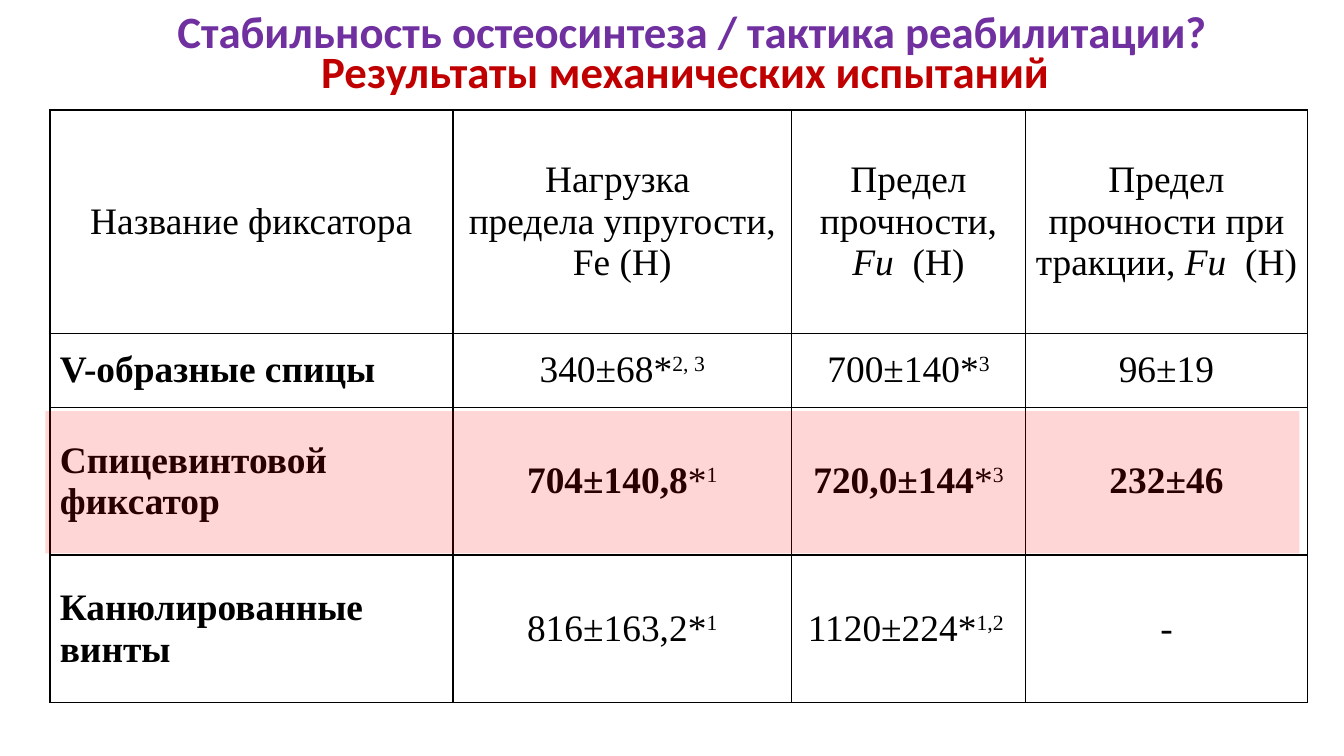
"""Build the slide that compares mechanical test results of three bone fixators."""
from dataclasses import dataclass

from lxml import etree
from pptx import Presentation
from pptx.dml.color import RGBColor
from pptx.enum import shapes, text
from pptx.oxml import ns
from pptx.util import Cm, Pt


@dataclass(frozen=True)
class Theme:
    heading_font: str = "Calibri"
    table_font: str = "Times New Roman"
    heading_size: int = 24
    table_size: int = 20
    heading: str = "7030A0"
    subheading: str = "C00000"
    ink: str = "000000"
    highlight: str = "FF0000"
    highlight_alpha: int = 16
    border: float = 1


@dataclass(frozen=True)
class Area:
    left: float
    top: float
    width: float
    height: float

    def lengths(self) -> tuple:
        return Cm(self.left), Cm(self.top), Cm(self.width), Cm(self.height)


@dataclass(frozen=True)
class Span:
    words: str
    bold: bool = False
    italic: bool = False
    raised: bool = False


@dataclass(frozen=True)
class Row:
    height: float
    cells: tuple


THEME = Theme()
TITLE_AREA = Area(1.5, 0, 23.16, 1.3)
SUBTITLE_AREA = Area(1.37, 0.74, 23.16, 1.3)
TABLE_AREA = Area(0.94, 2.08, 23.77, 11.2)
HIGHLIGHT_AREA = Area(0.86, 7.77, 23.7, 2.69)
COLUMN_WIDTHS = (7.62, 6.4, 4.42, 5.33)
SYMBOL = (Span("Fu  ", italic=True), Span("(Н)"))


def result(value: str, note: str = "", bold: bool = False) -> tuple:
    """Return the one paragraph of a measured value with its raised note."""
    if not note:
        return ((Span(value, bold),),)
    return ((Span(value, bold), Span("*"), Span(note, raised=True)),)


def name(words: str) -> tuple:
    """Return the one paragraph of a fixator name."""
    return ((Span(words, bold=True),),)


ROWS = (
    Row(4.22, (
        ((Span("Название фиксатора"),),),
        ((Span("Нагрузка "),), (Span("предела упругости, Fe (Н)"),)),
        ((Span("Предел прочности, "), *SYMBOL),),
        ((Span("Предел прочности при тракции, "), *SYMBOL),),
    )),
    Row(1.4, (name("V-образные спицы"), result("340±68", "2, 3"),
              result("700±140", "3"), result("96±19"))),
    Row(2.79, (name("Спицевинтовой фиксатор"), result("704±140,8", "1", True),
               result("720,0±144", "3", True), result("232±46", bold=True))),
    Row(2.79, (name("Канюлированные винты"), result("816±163,2", "1"),
               result("1120±224", "1,2 "), result("-"))),
)


def add_span(paragraph, words: str, *, font: str, size: float, color: str,
             bold: bool = False, italic: bool = False, raised: bool = False) -> None:
    """Append formatted words to a paragraph."""
    span = paragraph.add_run()
    span.text = words
    span.font.name = font
    span.font.size = Pt(size)
    span.font.bold = bold
    span.font.italic = italic
    span.font.color.rgb = RGBColor.from_string(color)
    if raised:
        span._r.get_or_add_rPr().set("baseline", "30000")


def write_heading(box, area: Area, words: str, color: str) -> None:
    """Place a box and write one centred heading line in it."""
    box.left, box.top, box.width, box.height = area.lengths()
    frame = box.text_frame
    frame.word_wrap = True
    frame.auto_size = text.MSO_AUTO_SIZE.NONE
    frame.vertical_anchor = text.MSO_ANCHOR.MIDDLE
    frame.margin_left = frame.margin_right = Cm(0.19)
    frame.margin_top = frame.margin_bottom = Cm(0.1)
    paragraph = frame.paragraphs[0]
    paragraph.alignment = text.PP_ALIGN.CENTER
    paragraph.line_spacing = 0.9
    paragraph.space_before = Pt(0)
    add_span(paragraph, words, font=THEME.heading_font, size=THEME.heading_size,
             color=color, bold=True)


def draw_borders(cell) -> None:
    """Give a cell a solid line on all four sides."""
    properties = cell._tc.get_or_add_tcPr()
    for side in ("a:lnL", "a:lnR", "a:lnT", "a:lnB"):
        line = etree.SubElement(properties, ns.qn(side), w=str(Pt(THEME.border)))
        fill = etree.SubElement(line, ns.qn("a:solidFill"))
        etree.SubElement(fill, ns.qn("a:srgbClr"), val=THEME.ink)


def write_cell(cell, paragraphs: tuple, alignment: text.PP_ALIGN) -> None:
    """Format a table cell and write its paragraphs."""
    draw_borders(cell)
    cell.fill.background()
    cell.vertical_anchor = text.MSO_ANCHOR.MIDDLE
    cell.margin_left = cell.margin_right = Cm(0.19)
    cell.margin_top = cell.margin_bottom = 0
    frame = cell.text_frame
    for index, spans in enumerate(paragraphs):
        paragraph = frame.add_paragraph() if index else frame.paragraphs[0]
        paragraph.alignment = alignment
        for span in spans:
            add_span(paragraph, span.words, font=THEME.table_font,
                     size=THEME.table_size, color=THEME.ink, bold=span.bold,
                     italic=span.italic, raised=span.raised)


def add_results(page) -> None:
    """Add the table of test results."""
    table = page.shapes.add_table(len(ROWS), len(COLUMN_WIDTHS),
                                  *TABLE_AREA.lengths()).table
    table.first_row = table.horz_banding = False
    for column, width in zip(table.columns, COLUMN_WIDTHS):
        column.width = Cm(width)
    for row_index, row in enumerate(ROWS):
        table.rows[row_index].height = Cm(row.height)
        for column_index, paragraphs in enumerate(row.cells):
            is_name = row_index > 0 and column_index == 0
            alignment = text.PP_ALIGN.LEFT if is_name else text.PP_ALIGN.CENTER
            write_cell(table.cell(row_index, column_index), paragraphs, alignment)


def add_highlight(page) -> None:
    """Lay a translucent band over the highlighted row."""
    band = page.shapes.add_shape(shapes.MSO_SHAPE.RECTANGLE, *HIGHLIGHT_AREA.lengths())
    band.shadow.inherit = False
    band.line.fill.background()
    band.fill.solid()
    band.fill.fore_color.rgb = RGBColor.from_string(THEME.highlight)
    color = band._element.spPr.find(ns.qn("a:solidFill")).find(ns.qn("a:srgbClr"))
    etree.SubElement(color, ns.qn("a:alpha"), val=str(THEME.highlight_alpha * 1000))


def main() -> None:
    """Build and save the deck."""
    deck = Presentation()
    deck.slide_width, deck.slide_height = Cm(25.4), Cm(14.29)
    page = deck.slides.add_slide(deck.slide_layouts[5])
    write_heading(page.shapes.title, TITLE_AREA,
                  "Стабильность остеосинтеза / тактика реабилитации?", THEME.heading)
    write_heading(page.shapes.add_textbox(*SUBTITLE_AREA.lengths()), SUBTITLE_AREA,
                  "Результаты механических испытаний", THEME.subheading)
    add_results(page)
    add_highlight(page)
    deck.save("out.pptx")


if __name__ == "__main__":
    main()
